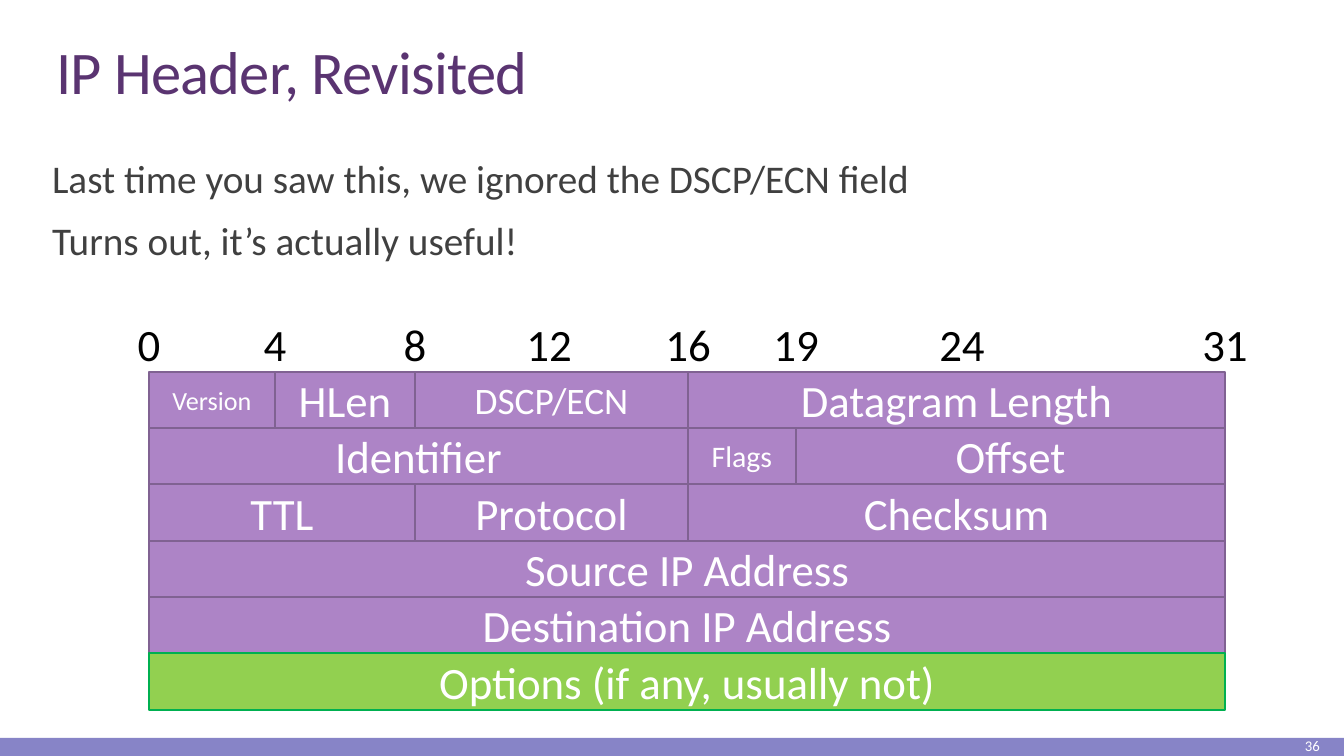
from dataclasses import dataclass

from pptx import Presentation
from pptx.dml.color import RGBColor as Rgb
from pptx.enum.shapes import MSO_SHAPE as Shape
from pptx.enum.text import MSO_ANCHOR as Anchor, PP_ALIGN as Align
from pptx.util import Pt

PX = 914400 / 134.4


@dataclass(frozen=True)
class Theme:
    """Colours, type sizes and line width of the deck."""
    font: str = "Calibri"
    title: str = "5A3471"
    body: str = "404040"
    scale: str = "000000"
    light: str = "FFFFFF"
    footer: str = "8784C7"
    field: str = "AD84C6"
    field_line: str = "806292"
    option: str = "92D050"
    option_line: str = "00B050"
    title_size: float = 32.4
    body_size: float = 21
    field_size: float = 24
    number_size: float = 7.9
    line_width: float = 1.25


THEME = Theme()
BIT_EDGES = {0: 0, 4: 126, 8: 266, 12: 400, 16: 539, 19: 647, 24: 813, 31: 1076}
HEADER_ROWS = [
    [("Version", 0, 4, 14), ("HLen", 4, 8, 24), ("DSCP/ECN", 8, 16, 20),
     ("Datagram Length", 16, 31, 24)],
    [("Identifier", 0, 16, 24), ("Flags", 16, 19, 16), ("Offset", 19, 31, 24)],
    [("TTL", 0, 8, 24), ("Protocol", 8, 16, 24), ("Checksum", 16, 31, 24)],
    [("Source IP Address", 0, 31, 24)],
    [("Destination IP Address", 0, 31, 24)],
    [("Options (if any, usually not)", 0, 31, 24)],
]


def emu(box):
    """Turn px lengths into EMU."""
    return [round(length * PX) for length in box]


def write(shape, lines, size, color, align=Align.LEFT, anchor=Anchor.MIDDLE, leading=1.0):
    """Fill a shape with one paragraph per line and return its text frame."""
    frame = shape.text_frame
    frame.word_wrap = True
    frame.vertical_anchor = anchor
    frame.text = "\n".join(lines)
    for para in frame.paragraphs:
        para.alignment = align
        para.line_spacing = leading
        para.font.name = THEME.font
        para.font.size = Pt(size)
        para.font.color.rgb = Rgb.from_string(color)
    return frame


def add_text(page, box, lines, size, color, **style):
    """Add a wrapping text box and return its text frame."""
    return write(page.shapes.add_textbox(*emu(box)), lines, size, color, **style)


def add_rect(page, box, fill, line=None):
    """Add a flat rectangle with an optional outline."""
    rect = page.shapes.add_shape(Shape.RECTANGLE, *emu(box))
    rect.shadow.inherit = False
    rect.fill.solid()
    rect.fill.fore_color.rgb = Rgb.from_string(fill)
    if line:
        rect.line.color.rgb = Rgb.from_string(line)
        rect.line.width = Pt(THEME.line_width)
    else:
        rect.line.fill.background()
    return rect


def add_title(page, box, text):
    """Add the slide title with slightly tightened letters."""
    frame = add_text(page, box, [text], THEME.title_size, THEME.title,
                     anchor=Anchor.BOTTOM, leading=0.85)
    span = frame.paragraphs[0].runs[0]
    span._r.get_or_add_rPr().set("spc", "-40")


def add_body(page, box, lines):
    """Add the introductory lines."""
    frame = add_text(page, box, lines, THEME.body_size, THEME.body,
                     anchor=Anchor.TOP, leading=0.9)
    frame.margin_left, frame.margin_right = emu((9, 0))
    for para in frame.paragraphs:
        para.space_after = Pt(1.5)
    for para in frame.paragraphs[1:]:
        para.space_before = Pt(9)


def add_bit_scale(page, box):
    """Centre each bit number on its edge."""
    left, top, width, height = box
    label_width = 88
    for bit, edge in BIT_EDGES.items():
        label_box = (left + edge - label_width // 2, top, label_width, height)
        add_text(page, label_box, [str(bit)], THEME.field_size, THEME.scale,
                 align=Align.CENTER)


def add_header_fields(page, box):
    """Stack the header rows evenly, with fields spanning their bits."""
    left, top, width, height = box
    for index, row in enumerate(HEADER_ROWS):
        row_top, row_end = (top + height * step // len(HEADER_ROWS)
                            for step in (index, index + 1))
        optional = index == len(HEADER_ROWS) - 1
        fill = THEME.option if optional else THEME.field
        line = THEME.option_line if optional else THEME.field_line
        for name, first, last, size in row:
            start, end = BIT_EDGES[first], BIT_EDGES[last]
            field_box = (left + start, row_top, end - start, row_end - row_top)
            write(add_rect(page, field_box, fill, line), [name], size, THEME.light,
                  align=Align.CENTER)


def add_footer(page, box, number):
    """Add the footer band and the slide number."""
    left, top, width, height = box
    add_rect(page, box, THEME.footer)
    add_text(page, (left + width - 156, top - 4, 145, 23), [number],
             THEME.number_size, THEME.light, align=Align.RIGHT)


def main():
    """Build and save the slide."""
    deck = Presentation()
    deck.slide_width, deck.slide_height = emu((1344, 756))
    page = deck.slides.add_slide(deck.slide_layouts[6])
    add_footer(page, (0, 738, 1344, 18), "36")
    add_title(page, (43, 32, 1274, 81), "IP Header, Revisited")
    add_body(page, (43, 153, 1274, 146),
             ["Last time you saw this, we ignored the DSCP/ECN field",
              "Turns out, it’s actually useful!"])
    add_bit_scale(page, (149, 300, 1076, 88))
    add_header_fields(page, (149, 372, 1076, 338))
    deck.save("out.pptx")


if __name__ == "__main__":
    main()
